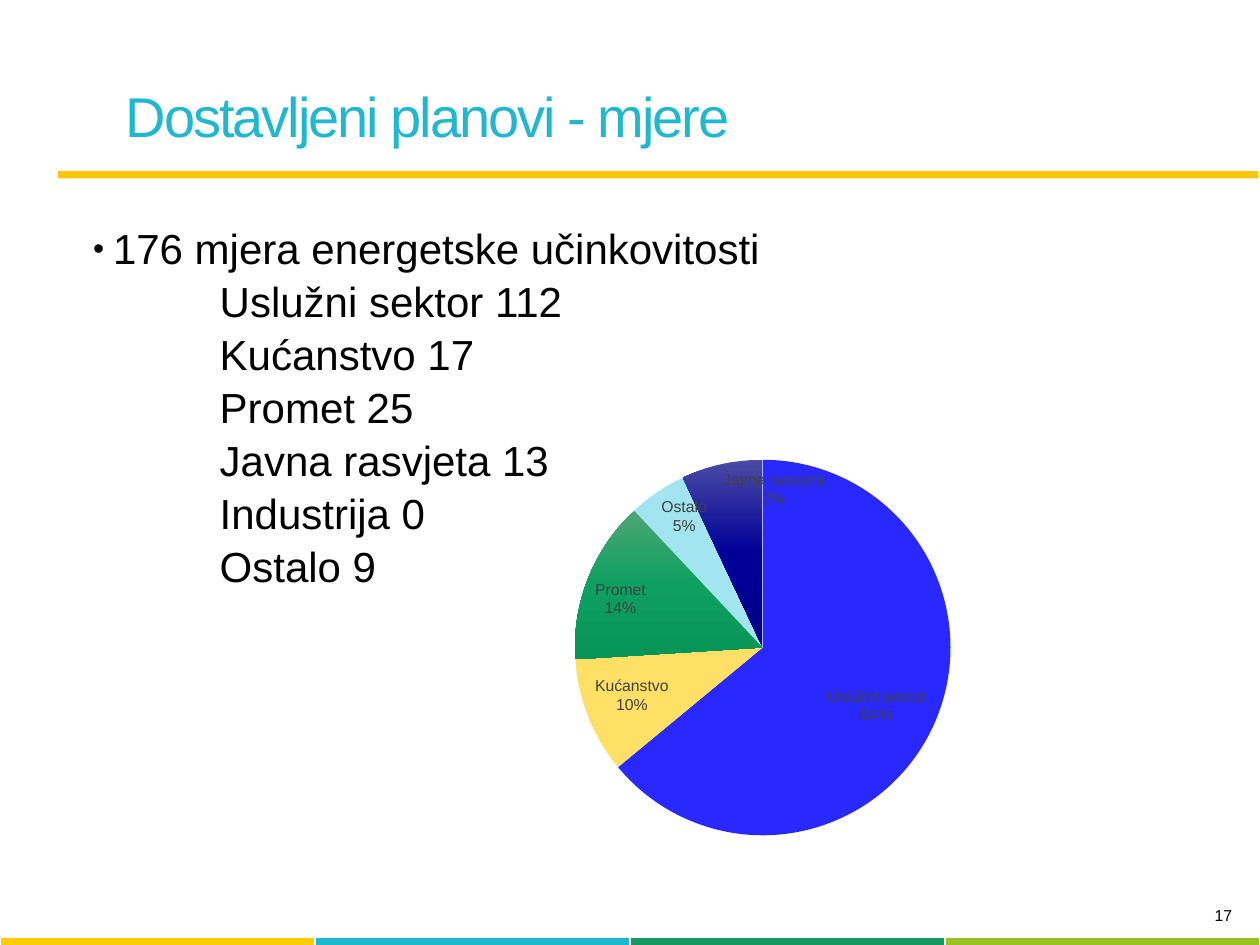
from copy import deepcopy
from dataclasses import dataclass

from pptx import Presentation
from pptx.chart.data import CategoryChartData
from pptx.dml.color import RGBColor
from pptx.enum.chart import XL_CHART_TYPE, XL_LABEL_POSITION
from pptx.enum.shapes import MSO_SHAPE
from pptx.enum.text import PP_ALIGN
from pptx.oxml import parse_xml
from pptx.oxml.ns import nsdecls, qn
from pptx.util import Cm, Pt


@dataclass(frozen=True)
class Theme:
    """Colours, font and type sizes of the slide."""
    font: str = "Arial"
    ink: str = "000000"
    title: str = "21B7CF"
    rule: str = "FDC609"
    label: str = "404040"
    strip: tuple = ("FFCC00", "1CB8CF", "159961", "98C222")
    big: float = 32
    body: float = 24
    small: float = 9


THEME = Theme()
MEASURES = ("176 mjera energetske učinkovitosti", "Uslužni sektor 112", "Kućanstvo 17",
            "Promet 25", "Javna rasvjeta 13", "Industrija 0", "Ostalo 9")
SHARES = (
    ("Uslužni sektor", 64, ("2929FF",)),
    ("Kućanstvo", 10, ("FFE066",)),
    ("Promet", 14, ("4CA674", "0EA061", "079457")),
    ("Ostalo", 5, ("A2E5F0",)),
    ("Javna rasvjeta", 7, ("4B4BA4", "000099", "000088")),
)


def place(box):
    """Turn a box in centimetres into lengths."""
    return [Cm(side) for side in box]


def style(font, size, color):
    """Set face, size and colour of a font."""
    font.name = THEME.font
    font.size = Pt(size)
    font.color.rgb = RGBColor.from_string(color)


def paint(fill, colors):
    """Fill with one colour, or with a gradient from top to bottom."""
    if len(colors) == 1:
        fill.solid()
        fill.fore_color.rgb = RGBColor.from_string(colors[0])
        return
    fill.gradient()
    fill.gradient_angle = 270
    stops = fill._xPr.find(qn("a:gradFill")).find(qn("a:gsLst"))
    while len(stops) < len(colors):
        stops.insert(1, deepcopy(stops[0]))
    for rank, (stop, color) in enumerate(zip(fill.gradient_stops, colors)):
        stop.position = rank / (len(colors) - 1)
        stop.color.rgb = RGBColor.from_string(color)


def add_text(slide, box, lines, size, color):
    """Add a wrapped text box and return its paragraphs."""
    frame = slide.shapes.add_textbox(*place(box)).text_frame
    frame.word_wrap = True
    frame.text = "\n".join(lines)
    for para in frame.paragraphs:
        style(para.font, size, color)
    return frame.paragraphs


def add_title(slide, box, text):
    """Add the tightly spaced title."""
    para = add_text(slide, box, [text], THEME.big, THEME.title)[0]
    para.line_spacing = 1.05
    para.runs[0].font._element.set("spc", "-120")


def add_rule(slide, box):
    """Add the bar below the title."""
    bar = slide.shapes.add_shape(MSO_SHAPE.RECTANGLE, *place(box))
    bar.shadow.inherit = False
    bar.line.fill.background()
    paint(bar.fill, (THEME.rule,))


def add_list(slide, box, lines):
    """Add a bulleted heading line with indented lines below it."""
    paras = add_text(slide, box, lines, THEME.body, THEME.ink)
    for para in paras:
        para.line_spacing = 1.05
        props = para._p.get_or_add_pPr()
        props.set("marL", str(Cm(2.55)))
    head = paras[0]._p.get_or_add_pPr()
    head.set("marL", str(Cm(0.4)))
    head.set("indent", str(-Cm(0.4)))
    bullet = ('<a:buSzPct %s val="75000"/>', '<a:buFont %s typeface="Arial"/>',
              '<a:buChar %s char="•"/>')
    spot = head.index(head.find(qn("a:defRPr")))
    for step, mark in enumerate(bullet):
        head.insert(spot + step, parse_xml(mark % nsdecls("a")))


def add_pie(slide, box, shares):
    """Add the pie of shares, labelled with name and percentage."""
    data = CategoryChartData()
    data.categories = [name for name, _, _ in shares]
    data.add_series("Mjere", [value for _, value, _ in shares])
    chart = slide.shapes.add_chart(XL_CHART_TYPE.PIE, *place(box), data).chart
    chart.has_title = False
    chart.has_legend = False
    style(chart.font, 10, THEME.ink)
    plot = chart.plots[0]
    plot.vary_by_categories = True
    series = plot.series[0]
    for rank, (_, _, colors) in enumerate(shares):
        look = series.points[rank].format
        paint(look.fill, colors)
        look.line.fill.background()
    labels = series.data_labels
    labels.show_value = False
    labels.show_category_name = True
    labels.show_percentage = True
    labels.number_format = "0%"
    labels.number_format_is_linked = False
    labels.position = XL_LABEL_POSITION.INSIDE_END
    style(labels.font, THEME.small, THEME.label)
    percent = labels._element.find(qn("c:showBubbleSize"))
    if percent is None:
        percent = labels._element.find(qn("c:showPercent"))
    percent.addnext(parse_xml("<c:separator %s>\n</c:separator>" % nsdecls("c")))
    center_pie(chart, box)


def center_pie(chart, box):
    """Centre a circle of 92% of the chart height."""
    high = 0.92
    wide = high * box[3] / box[2]
    area = chart._chartSpace.find(".//" + qn("c:plotArea"))
    for old in area.findall(qn("c:layout")):
        area.remove(old)
    sides = {"x": (1 - wide) / 2, "y": (1 - high) / 2, "w": wide, "h": high}
    parts = "".join(f'<c:{key} val="{val:.3f}"/>' for key, val in sides.items())
    area.insert(0, parse_xml(
        f'<c:layout {nsdecls("c")}><c:manualLayout><c:layoutTarget val="inner"/>'
        f'<c:xMode val="edge"/><c:yMode val="edge"/>{parts}</c:manualLayout></c:layout>'))


def add_strip(slide, box, colors):
    """Add the row of coloured cells at the foot."""
    table = slide.shapes.add_table(1, len(colors), *place(box)).table
    for cell, color in zip(table.rows[0].cells, colors):
        paint(cell.fill, (color,))


def add_number(slide, box, text):
    """Add the page number at the right."""
    add_text(slide, box, [text], THEME.small, THEME.ink)[0].alignment = PP_ALIGN.RIGHT


def main():
    """Build the slide and save it."""
    deck = Presentation()
    deck.slide_width, deck.slide_height = Cm(25.4), Cm(19.05)
    slide = deck.slides.add_slide(deck.slide_layouts[6])
    add_strip(slide, (0, 18.9, 25.4, 0.43), THEME.strip)
    add_number(slide, (20.09, 18.14, 5, 0.79), "17")
    add_title(slide, (2.29, 1.45, 22.43, 1.63), "Dostavljeni planovi - mjere")
    add_rule(slide, (1.17, 3.45, 24.2, 0.15))
    add_list(slide, (1.63, 4.32, 22.66, 7.44), MEASURES)
    add_pie(slide, (7.9, 8.94, 14.94, 8.23), SHARES)
    deck.save("out.pptx")


if __name__ == "__main__":
    main()
